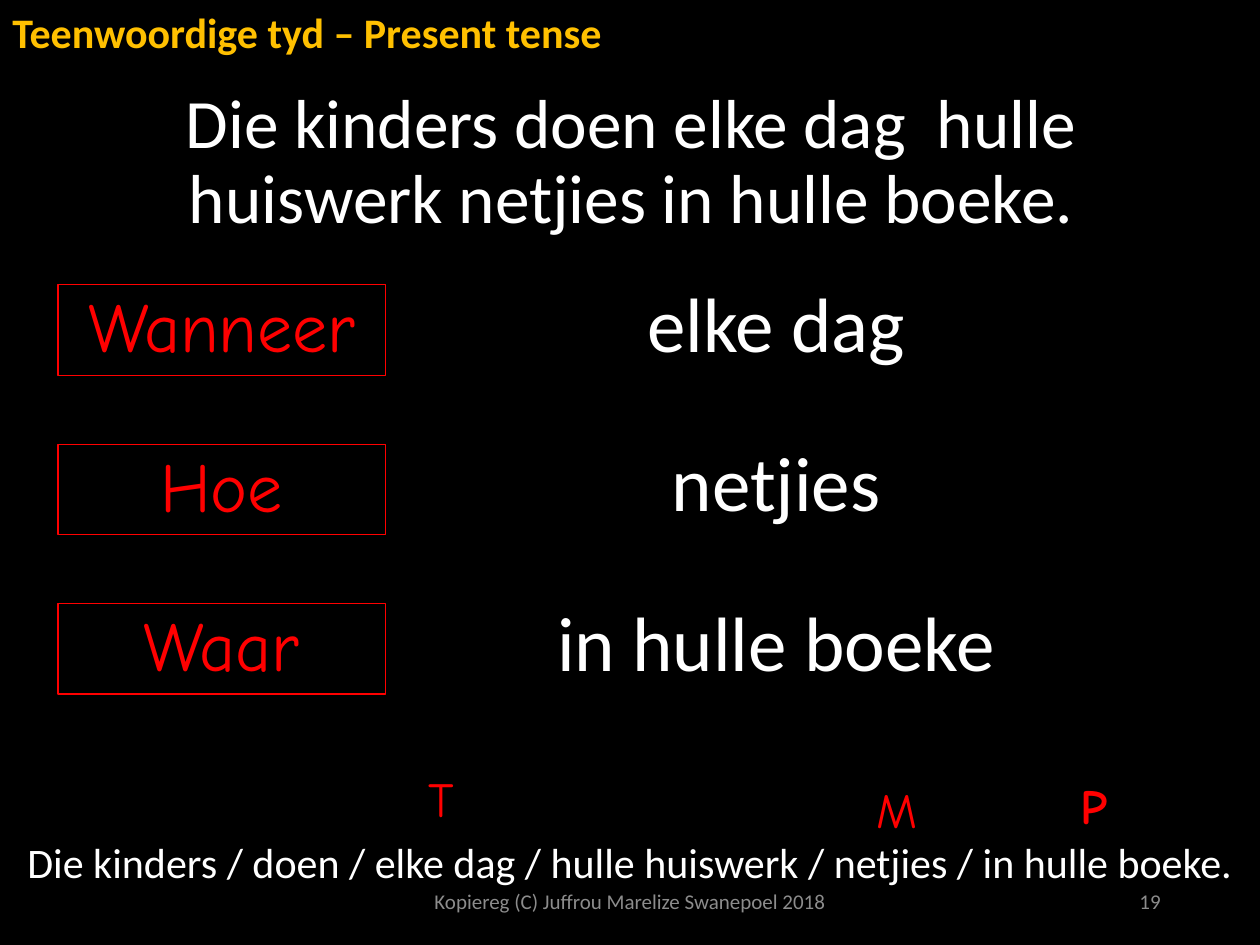
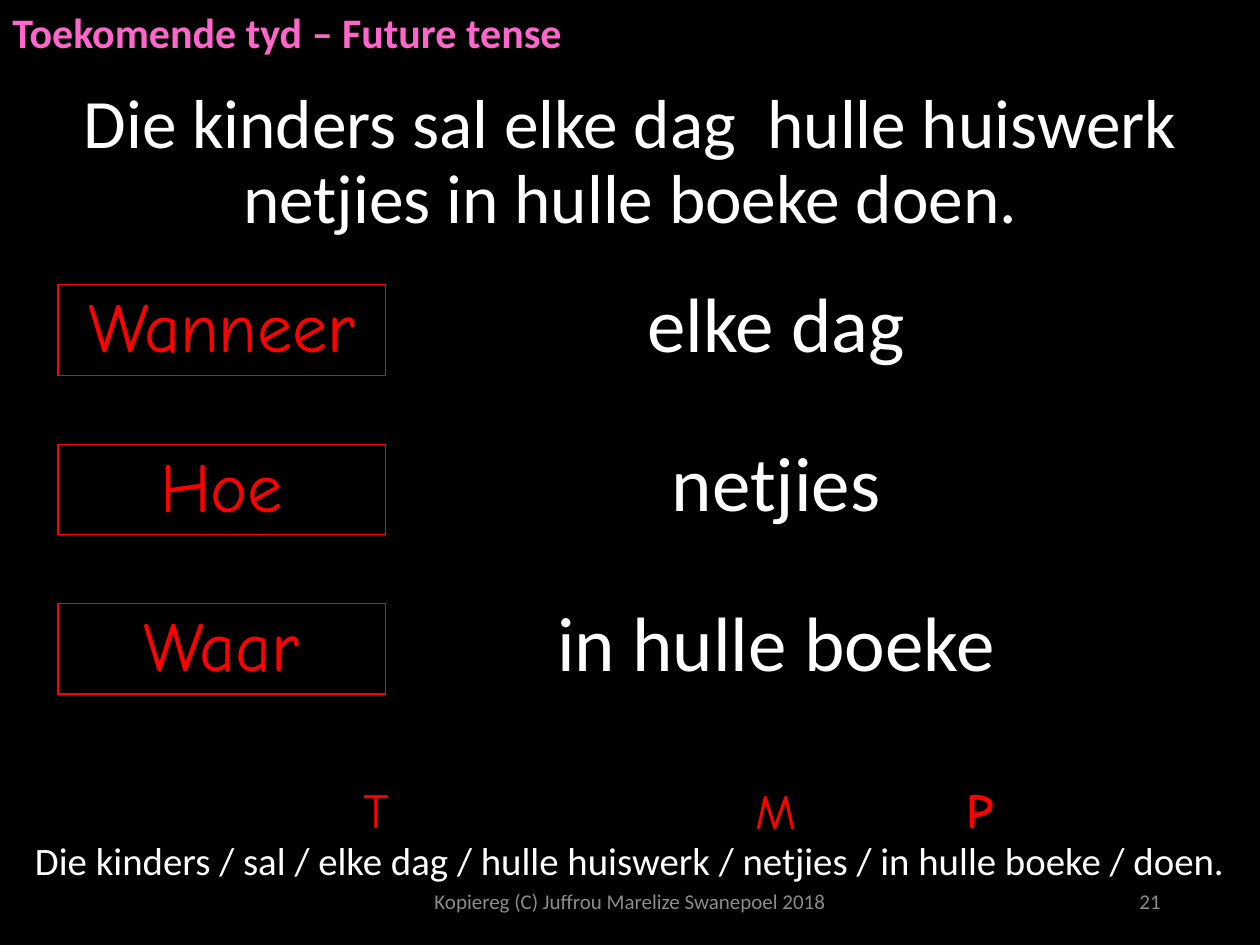
import dataclasses

import pptx
import pptx.dml.color
import pptx.enum.shapes
import pptx.enum.text
import pptx.util

Pt = pptx.util.Pt
RGB = pptx.dml.color.RGBColor.from_string
ALIGN = pptx.enum.text.PP_ALIGN


@dataclasses.dataclass(frozen=True)
class Style:
    """Describe one kind of text."""
    size: float
    color: str
    font: str = "Calibri"
    bold: bool = False
    align: ALIGN = ALIGN.CENTER
    spacing: float = 1.0
    inset: float = 3.6


@dataclasses.dataclass(frozen=True)
class Theme:
    """Hold the colours and type styles of the lesson."""
    background: str = "000000"
    accent: str = "FF0000"
    present: str = "FFC000"
    future: str = "FF66CC"
    outline: float = 0.75
    tense: Style = Style(24, "FFC000", bold=True, align=ALIGN.LEFT)
    sentence: Style = Style(39.6, "FFFFFF", spacing=0.9)
    question: Style = Style(40, "FF0000", "Comic Neue", spacing=0.9, inset=7.2)
    answer: Style = Style(44, "FFFFFF", spacing=0.8)
    breakdown: Style = Style(24, "FFFFFF", spacing=2.2)
    mark: Style = Style(28, "FF0000", "Comic Neue", spacing=0.9, inset=7.2)
    footer: Style = Style(12, "8C8C8C")


THEME = Theme()
COPYRIGHT = "Kopiereg (C) Juffrou Marelize Swanepoel 2018"
ANSWERS = {"Wanneer": "elke dag", "Hoe": "netjies", "Waar": "in hulle boeke"}
ROW_TOP, ROW_PITCH, ROW_HEIGHT = 162.7, 91.1, 51.8

LESSONS = [
    {
        "tense": "Teenwoordige tyd – Present tense",
        "tense_color": THEME.present,
        "sentence": "Die kinders doen elke dag  hulle huiswerk netjies in hulle boeke.",
        "sentence_span": (50.4, 620.6),
        "breakdown": "Die kinders / doen / elke dag / hulle huiswerk / netjies / in hulle boeke.",
        "breakdown_size": 24,
        "marks": {"T": (224.6, 436.3), "M": (485.3, 442.8), "P": (597.6, 440.6)},
        "number": "19",
    },
    {
        "tense": "Toekomende tyd – Future tense",
        "tense_color": THEME.future,
        "sentence": "Die kinders sal elke dag  hulle huiswerk netjies in hulle boeke doen.",
        "sentence_span": (15.8, 689),
        "breakdown": "Die kinders / sal / elke dag / hulle huiswerk / netjies / in hulle boeke / doen.",
        "breakdown_size": 22.2,
        "marks": {"T": (187.9, 442.8), "M": (416.2, 443.5), "P": (532.8, 442.8)},
        "number": "21",
    },
]


def set_values(target, values):
    """Set each named value on the target."""
    for name, value in values.items():
        setattr(target, name, value)


def write_text(holder, text, style):
    """Write one styled paragraph, centred vertically, into a shape."""
    frame = holder.text_frame
    set_values(frame, {
        "word_wrap": True,
        "vertical_anchor": pptx.enum.text.MSO_ANCHOR.MIDDLE,
        "margin_left": Pt(7.2),
        "margin_right": Pt(7.2),
        "margin_top": Pt(style.inset),
        "margin_bottom": Pt(style.inset),
    })
    paragraph = frame.paragraphs[0]
    set_values(paragraph, {"alignment": style.align, "line_spacing": style.spacing})
    run = paragraph.add_run()
    run.text = text
    set_values(run.font, {"name": style.font, "size": Pt(style.size), "bold": style.bold})
    run.font.color.rgb = RGB(style.color)


def add_text(slide, box, text, style):
    """Add a text box at left, top, width, height."""
    write_text(slide.shapes.add_textbox(*map(Pt, box)), text, style)


def add_question(slide, box, text):
    """Add an outlined question word."""
    question = slide.shapes.add_shape(
        pptx.enum.shapes.MSO_SHAPE.RECTANGLE, *map(Pt, box))
    question.shadow.inherit = False
    question.fill.solid()
    question.fill.fore_color.rgb = RGB(THEME.background)
    question.line.color.rgb = RGB(THEME.accent)
    question.line.width = Pt(THEME.outline)
    write_text(question, text, THEME.question)


def add_answers(slide):
    """Add the rows of question words and their answers."""
    for row, (question, answer) in enumerate(ANSWERS.items()):
        top = ROW_TOP + row * ROW_PITCH
        add_question(slide, (33.1, top, 187.2, ROW_HEIGHT), question)
        add_text(slide, (240.5, top, 406.1, ROW_HEIGHT), answer, THEME.answer)


def add_breakdown(slide, lesson):
    """Add the divided sentence with its letters above."""
    style = dataclasses.replace(THEME.breakdown, size=lesson["breakdown_size"])
    add_text(slide, (0, 435.6, 720, 79.2), lesson["breakdown"], style)
    for letter, (left, top) in lesson["marks"].items():
        mark = dataclasses.replace(THEME.mark, bold=letter == "P")
        add_text(slide, (left, top, 54.7, 43.2), letter, mark)


def add_footer(slide, number):
    """Add the copyright line and the page number."""
    add_text(slide, (238.3, 500.4, 243.4, 28.8), COPYRIGHT, THEME.footer)
    right = dataclasses.replace(THEME.footer, align=ALIGN.RIGHT)
    add_text(slide, (508.3, 500.4, 162, 28.8), number, right)


def add_lesson(deck, lesson):
    """Add one slide about a tense."""
    slide = deck.slides.add_slide(deck.slide_layouts[6])
    slide.background.fill.solid()
    slide.background.fill.fore_color.rgb = RGB(THEME.background)
    left, width = lesson["sentence_span"]
    add_text(slide, (left, 54, width, 79.2), lesson["sentence"], THEME.sentence)
    tense = dataclasses.replace(THEME.tense, color=lesson["tense_color"])
    add_text(slide, (0, 0, 360.7, 36), lesson["tense"], tense)
    add_answers(slide)
    add_breakdown(slide, lesson)
    add_footer(slide, lesson["number"])


def main():
    """Build and save the lesson slides."""
    deck = pptx.Presentation()
    set_values(deck, {"slide_width": Pt(720), "slide_height": Pt(540)})
    for lesson in LESSONS:
        add_lesson(deck, lesson)
    deck.save("out.pptx")


if __name__ == "__main__":
    main()
